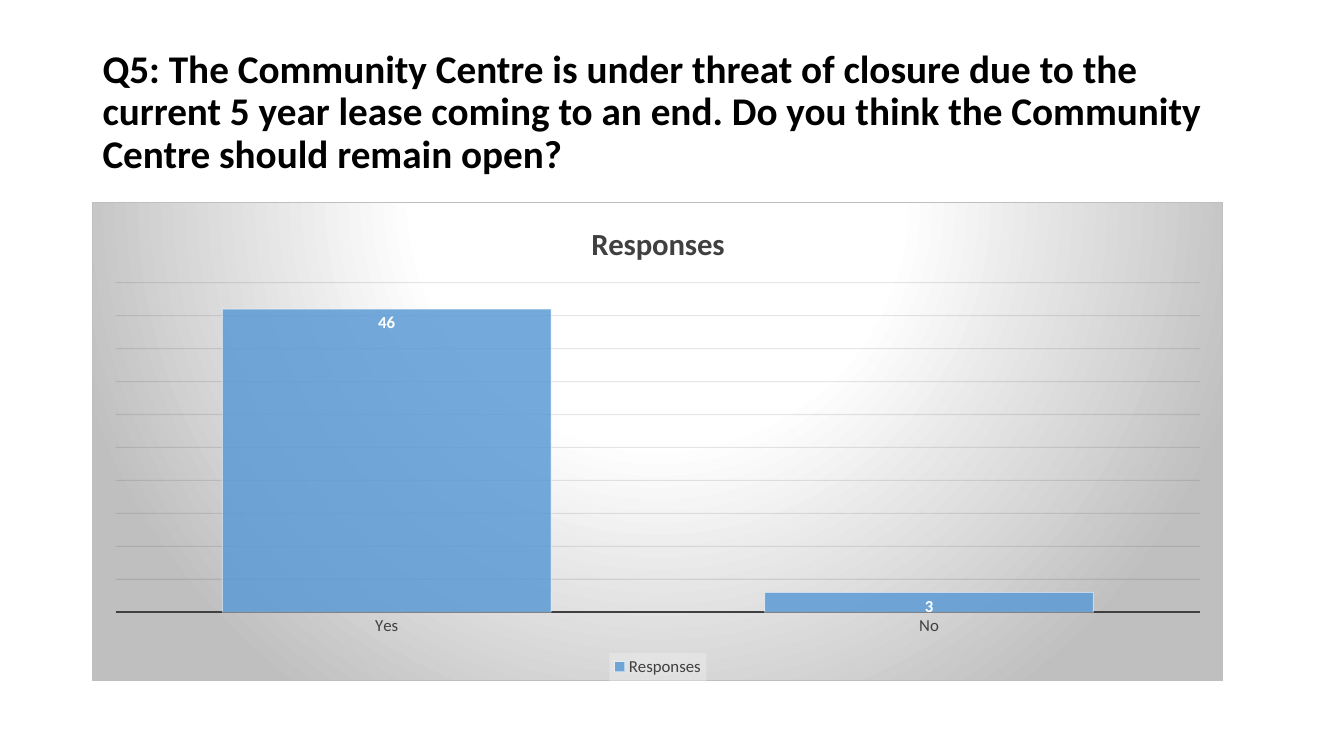
from lxml.etree import SubElement
from pptx import Presentation
from pptx.chart.data import CategoryChartData
from pptx.dml.color import RGBColor
from pptx.enum.chart import XL_CHART_TYPE, XL_LABEL_POSITION, XL_LEGEND_POSITION, XL_TICK_MARK
from pptx.enum.text import MSO_ANCHOR, MSO_AUTO_SIZE, PP_ALIGN
from pptx.oxml import parse_xml
from pptx.oxml.ns import nsdecls, qn
from pptx.util import Cm, Pt

QUESTION = (
    "Q5: The Community Centre is under threat of closure due to the current 5 year lease "
    "coming to an end. Do you think the Community Centre should remain open?"
)
SERIES_NAME = "Responses"
RESPONSES = {"Yes": 46, "No": 3}
FONT = "Calibri"
DARK_GREY, SILVER, WHITE = "404040", "BFBFBF", "FFFFFF"
BACKGROUND_STOPS = [(0, WHITE), (39, WHITE), (100, SILVER)]
LEFT = Cm(2.33)


def color(value):
    return RGBColor.from_string(value)


def style_font(font, size, value, bold=False):
    font.name = FONT
    font.size = Pt(size)
    font.bold = bold
    font.color.rgb = color(value)


def style_line(line, value, width):
    line.color.rgb = color(value)
    line.width = Pt(width)


def set_opacity(chart, location, percent):
    for color_element in chart.element.xpath(f"{location}//a:srgbClr"):
        SubElement(color_element, qn("a:alpha")).set("val", str(percent * 1000))


def add_background(chart):
    stops = "".join(
        f'<a:gs pos="{position * 1000}"><a:srgbClr val="{value}"/></a:gs>'
        for position, value in BACKGROUND_STOPS
    )
    properties = parse_xml(
        f'<c:spPr {nsdecls("c", "a")}><a:gradFill><a:gsLst>{stops}</a:gsLst>'
        '<a:path path="circle"><a:fillToRect l="50000" t="-80000" r="50000" b="180000"/></a:path>'
        f'</a:gradFill><a:ln w="{Pt(0.75)}"><a:solidFill><a:srgbClr val="{SILVER}"/>'
        "</a:solidFill></a:ln></c:spPr>"
    )
    chart.element.find(qn("c:chart")).addnext(properties)


def add_title(slide):
    title = slide.shapes.title
    title.left, title.top, title.width, title.height = LEFT, Cm(1.01), Cm(29.21), Cm(3.68)
    frame = title.text_frame
    frame.text = QUESTION
    frame.word_wrap = True
    frame.auto_size = MSO_AUTO_SIZE.NONE
    frame.vertical_anchor = MSO_ANCHOR.MIDDLE
    paragraph = frame.paragraphs[0]
    paragraph.alignment = PP_ALIGN.LEFT
    paragraph.line_spacing = 0.9
    style_font(paragraph.font, 28, "000000", True)


def add_response_chart(slide):
    data = CategoryChartData()
    data.categories = list(RESPONSES)
    data.add_series(SERIES_NAME, list(RESPONSES.values()))
    chart = slide.shapes.add_chart(
        XL_CHART_TYPE.COLUMN_CLUSTERED, LEFT, Cm(5.08), Cm(28.5), Cm(12.09), data
    ).chart
    style_font(chart.font, 10, "000000")

    chart.has_title = True
    chart.chart_title.include_in_layout = False
    paragraph = chart.chart_title.text_frame.paragraphs[0]
    paragraph.text = SERIES_NAME
    style_font(paragraph.font, 22, DARK_GREY, True)

    category_axis = chart.category_axis
    category_axis.major_tick_mark = XL_TICK_MARK.NONE
    style_font(category_axis.tick_labels.font, 12, DARK_GREY)
    style_line(category_axis.format.line, DARK_GREY, 1.5)

    value_axis = chart.value_axis
    value_axis.visible = False
    value_axis.minimum_scale, value_axis.maximum_scale, value_axis.major_unit = 0, 50, 5
    style_line(value_axis.major_gridlines.format.line, "0D0D0D", 0.75)
    set_opacity(chart, "//c:majorGridlines", 10)

    plot = chart.plots[0]
    plot.gap_width = 65
    plot.vary_by_categories = False
    columns = plot.series[0]
    columns.format.fill.solid()
    columns.format.fill.fore_color.rgb = color("5B9BD5")
    style_line(columns.format.line, WHITE, 0.75)
    set_opacity(chart, "//c:ser/c:spPr/a:solidFill", 85)
    set_opacity(chart, "//c:ser/c:spPr/a:ln", 50)
    labels = columns.data_labels
    labels.show_value = True
    labels.position = XL_LABEL_POSITION.INSIDE_END
    style_font(labels.font, 12, WHITE, True)

    chart.has_legend = True
    chart.legend.position = XL_LEGEND_POSITION.BOTTOM
    chart.legend.include_in_layout = False
    style_font(chart.legend.font, 12, DARK_GREY)
    legend_fill = parse_xml(
        f'<c:spPr {nsdecls("c", "a")}><a:solidFill><a:srgbClr val="F2F2F2"/></a:solidFill></c:spPr>'
    )
    chart.element.xpath("//c:legend/c:overlay")[0].addnext(legend_fill)
    set_opacity(chart, "//c:legend/c:spPr", 39)
    add_background(chart)


def main():
    presentation = Presentation()
    presentation.slide_width, presentation.slide_height = Cm(33.87), Cm(19.05)
    slide = presentation.slides.add_slide(presentation.slide_layouts[5])
    add_title(slide)
    add_response_chart(slide)
    presentation.save("out.pptx")


if __name__ == "__main__":
    main()
